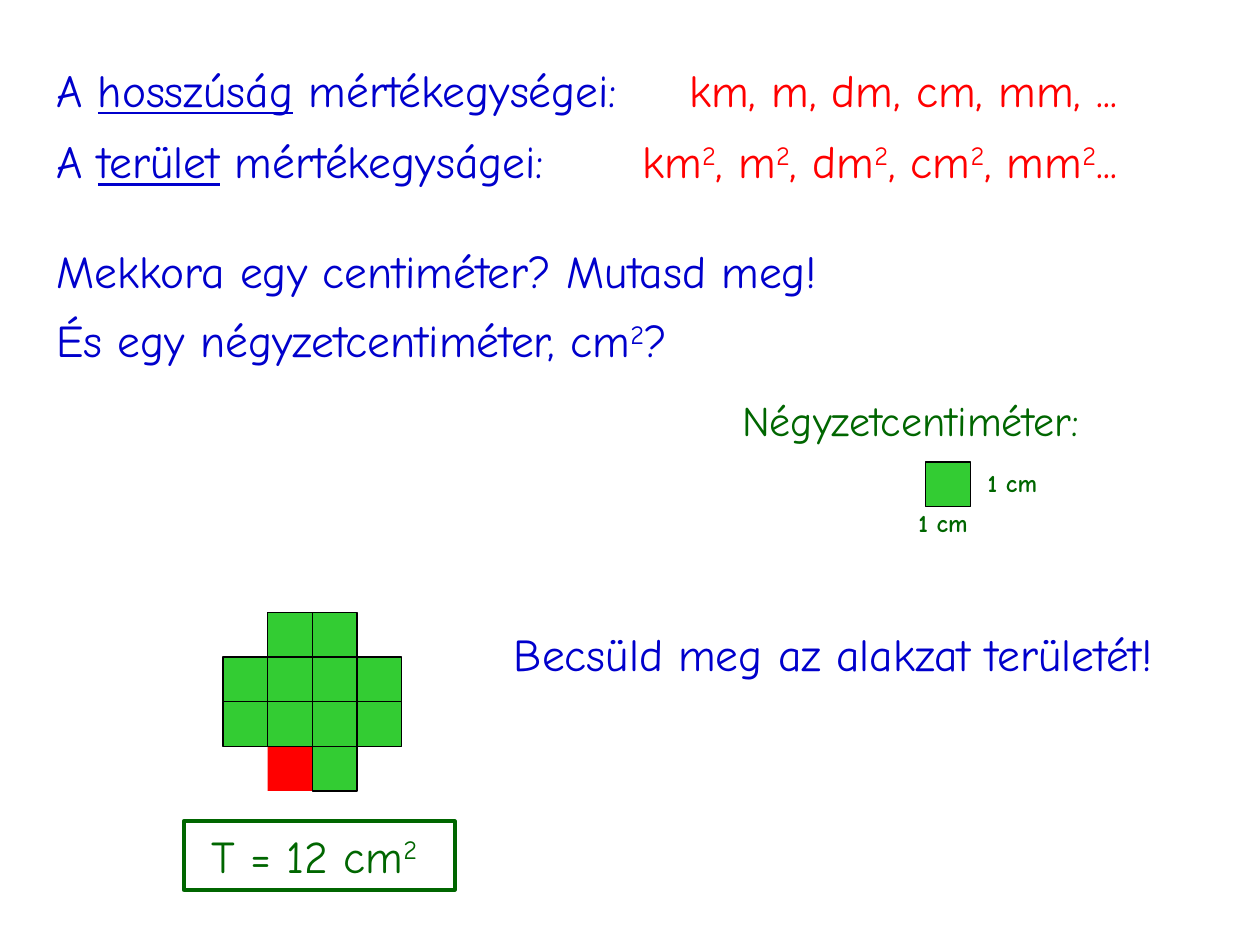
from pptx import Presentation
from pptx.dml.color import RGBColor
from pptx.enum import shapes, text
from pptx.util import Pt

BLUE = RGBColor(0x00, 0x00, 0xCC)
RED = RGBColor(0xFF, 0x00, 0x00)
DARK_GREEN = RGBColor(0x00, 0x66, 0x00)
GREEN = RGBColor(0x33, 0xCC, 0x33)
BLACK = RGBColor(0x00, 0x00, 0x00)
FONT = "Comic Neue"
CELL = 25.5  # side of one square centimetre


def write(shape, marked_text, color, size=26, bold=None, underlined=None, wrap=False):
    """Fill a shape with one line; "|" parts the runs, and a run "2" is raised."""
    frame = shape.text_frame
    frame.word_wrap = wrap
    frame.auto_size = text.MSO_AUTO_SIZE.SHAPE_TO_FIT_TEXT
    frame.vertical_anchor = text.MSO_ANCHOR.TOP
    paragraph = frame.paragraphs[0]
    paragraph.alignment = text.PP_ALIGN.LEFT
    for piece in marked_text.split("|"):
        run = paragraph.add_run()
        run.text = piece
        run.font.name = FONT
        run.font.size = Pt(size)
        run.font.bold = bold
        run.font.color.rgb = color
        if piece == underlined:
            run.font.underline = True
        if piece == "2":
            run.font._element.set("baseline", "30000")


def add_box(preset, left, top, width, height, fill=None, line=None, line_width=0.75):
    shape = slide.shapes.add_shape(preset, Pt(left), Pt(top), Pt(width), Pt(height))
    shape.shadow.inherit = False
    if fill is None:
        shape.fill.background()
    else:
        shape.fill.solid()
        shape.fill.fore_color.rgb = fill
    if line is None:
        shape.line.fill.background()
    else:
        shape.line.color.rgb = line
        shape.line.width = Pt(line_width)
    return shape


presentation = Presentation()
presentation.slide_width, presentation.slide_height = Pt(720), Pt(540)
slide = presentation.slides.add_slide(presentation.slide_layouts[6])

# Left, top, width, height, text, colour, further text settings
labels = [
    (25, 31.7, 372, 39, "A |hosszúság| mértékegységei:", BLUE, {"underlined": "hosszúság"}),
    (386.7, 31.7, 273, 38.5, "km, m, dm, cm, mm, ...", RED, {}),
    (25, 72.7, 336, 39, "A |terület| mértékegységei:".replace("ségei", "ságei"), BLUE,
     {"underlined": "terület"}),
    (360, 72.7, 310, 38.5, "km|2|, m|2|, dm|2|, cm|2|, mm|2|...", RED, {}),
    (25, 135.4, 634, 39, "Mekkora egy centiméter? Mutasd meg!", BLUE, {"wrap": True}),
    (25, 175, 415, 39, "És egy négyzetcentiméter, cm|2|?", BLUE, {}),
    (417, 221.8, 242.6, 36, "Négyzetcentiméter:", DARK_GREEN, {"size": 24, "wrap": True}),
    (517.7, 286.6, 47.5, 24, "1 cm", DARK_GREEN, {"size": 14, "bold": True}),
    (557.3, 264, 47.5, 24, "1 cm", DARK_GREEN, {"size": 14, "bold": True}),
    (286.6, 354.2, 431, 39, "Becsüld meg az alakzat területét!", BLUE, {}),
]
for left, top, width, height, wording, color, settings in labels:
    box = slide.shapes.add_textbox(Pt(left), Pt(top), Pt(width), Pt(height))
    write(box, wording, color, **settings)

# One square centimetre
RECTANGLE = shapes.MSO_SHAPE.RECTANGLE
add_box(RECTANGLE, 529, 264, CELL, CELL, GREEN, BLACK)

# The cross, covered by squares except for one cell
CROSS_LEFT, CROSS_TOP = 127.5, 350
cross = add_box(shapes.MSO_SHAPE.CROSS, CROSS_LEFT, CROSS_TOP, 4 * CELL, 4 * CELL, RED)
cross.adjustments[0] = 0.25
covered_columns = [(1, 2), (0, 1, 2, 3), (0, 1, 2, 3), (2,)]
for row, columns in enumerate(covered_columns):
    for column in columns:
        add_box(RECTANGLE, CROSS_LEFT + column * CELL, CROSS_TOP + row * CELL,
                CELL, CELL, GREEN, BLACK)

result = add_box(RECTANGLE, 105, 469.4, 155, 39, line=DARK_GREEN, line_width=2.25)
write(result, " T = 12 cm|2", DARK_GREEN)

presentation.save("out.pptx")
